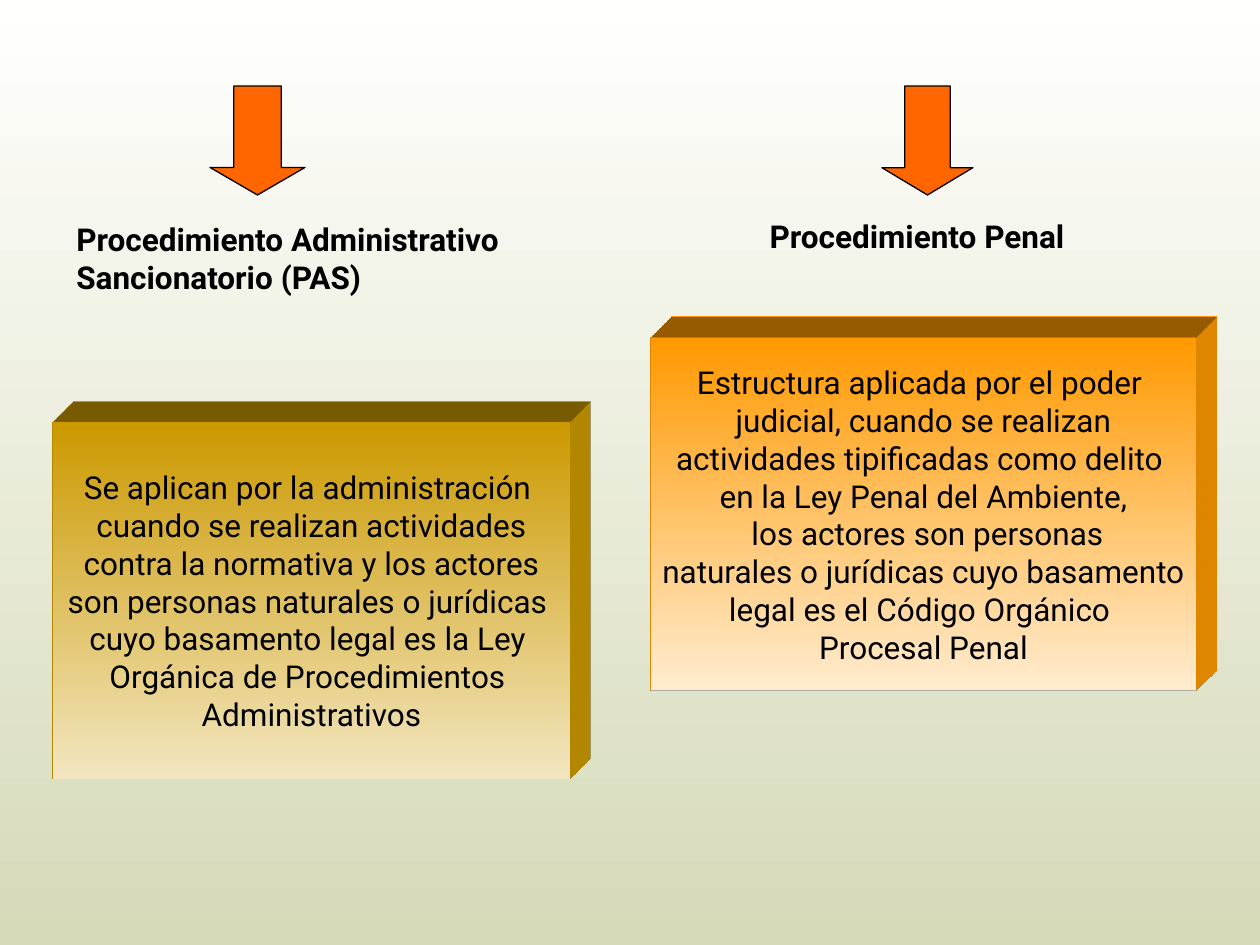
import lxml.etree
import pptx
import pptx.dml.color
import pptx.enum.shapes
import pptx.enum.text
import pptx.oxml.ns
import pptx.util

RGB = pptx.dml.color.RGBColor
SHAPE = pptx.enum.shapes.MSO_SHAPE
ALIGN = pptx.enum.text.PP_ALIGN
ANCHOR = pptx.enum.text.MSO_ANCHOR

BLACK = RGB(0x00, 0x00, 0x00)
ARROW_ORANGE = RGB(0xFF, 0x66, 0x00)
PAGE_TOP, PAGE_BOTTOM = RGB(0xFF, 0xFF, 0xFD), RGB(0xD6, 0xDA, 0xB9)
GOLD, PALE_GOLD = RGB(0xCC, 0x99, 0x00), RGB(0xF2, 0xE6, 0xC0)
ORANGE, PALE_ORANGE = RGB(0xFF, 0x99, 0x00), RGB(0xFF, 0xEC, 0xD0)

EMU_PER_PX = 914400 / 126

DEPTH_XML = """<a:spPr xmlns:a="http://schemas.openxmlformats.org/drawingml/2006/main">
<a:scene3d><a:camera prst="legacyObliqueTopRight"/><a:lightRig rig="legacyFlat3" dir="b"/></a:scene3d>
<a:sp3d extrusionH="430200" prstMaterial="legacyMatte"><a:extrusionClr><a:srgbClr val="{}"/></a:extrusionClr></a:sp3d>
</a:spPr>"""

# One branch per procedure; frames are left, top, width, height in px
branches = [
    {
        "arrow": (210, 86, 95, 109), "head": 0.29,
        "heading": "Procedimiento Administrativo Sancionatorio (PAS)",
        "heading_frame": (64, 214, 486, 126), "align": ALIGN.LEFT,
        "block": (53, 422, 517, 357), "colors": (GOLD, PALE_GOLD),
        "lines": [
            "Se aplican por la administración ",
            "cuando se realizan actividades",
            "contra la normativa y los actores",
            "son personas naturales o jurídicas ",
            "cuyo basamento legal es la Ley ",
            "Orgánica de Procedimientos ",
            "Administrativos",
        ],
    },
    {
        "arrow": (882, 86, 91, 109), "head": 0.3,
        "heading": "Procedimiento Penal",
        "heading_frame": (669, 211, 496, 50), "align": ALIGN.CENTER,
        "block": (651, 338, 545, 353), "colors": (ORANGE, PALE_ORANGE),
        "lines": [
            "Estructura aplicada por el poder ",
            "judicial, cuando se realizan",
            "actividades tipificadas como delito ",
            "en la Ley Penal del Ambiente,",
            " los actores son personas",
            "naturales o jurídicas cuyo basamento",
            "legal es el Código Orgánico ",
            "Procesal Penal",
        ],
    },
]


def px(*lengths):
    return [pptx.util.Emu(round(n * EMU_PER_PX)) for n in lengths]


def shade(fill, top, bottom):
    fill.gradient()
    fill.gradient_angle = 270
    for stop, color, position in zip(fill.gradient_stops, (top, bottom), (0, 1)):
        stop.color.rgb = color
        stop.position = position


presentation = pptx.Presentation()
presentation.slide_width, presentation.slide_height = px(1260, 945)
slide = presentation.slides.add_slide(presentation.slide_layouts[6])
shade(slide.background.fill, PAGE_TOP, PAGE_BOTTOM)

for branch in branches:
    # Arrow pointing to the heading
    arrow = slide.shapes.add_shape(SHAPE.DOWN_ARROW, *px(*branch["arrow"]))
    arrow.adjustments[0] = 0.5
    arrow.adjustments[1] = branch["head"]
    arrow.shadow.inherit = False
    arrow.fill.solid()
    arrow.fill.fore_color.rgb = ARROW_ORANGE
    arrow.line.color.rgb = BLACK
    arrow.line.width = pptx.util.Pt(0.75)

    # Raised block with the explanation
    block = slide.shapes.add_shape(SHAPE.RECTANGLE, *px(*branch["block"]))
    block.shadow.inherit = False
    shade(block.fill, *branch["colors"])
    block.line.fill.background()
    depth = lxml.etree.fromstring(DEPTH_XML.format(branch["colors"][0]))
    block_properties = block.element.find(pptx.oxml.ns.qn("p:spPr"))
    for part in list(depth):
        block_properties.append(part)
    block.text_frame.word_wrap = False
    block.text_frame.vertical_anchor = ANCHOR.MIDDLE

    # Heading
    heading = slide.shapes.add_textbox(*px(*branch["heading_frame"]))
    heading.text_frame.word_wrap = True

    # Wording of both
    for frame, lines, align, bold in (
        (block.text_frame, branch["lines"], ALIGN.CENTER, False),
        (heading.text_frame, [branch["heading"]], branch["align"], True),
    ):
        for index, line in enumerate(lines):
            paragraph = frame.add_paragraph() if index else frame.paragraphs[0]
            paragraph.alignment = align
            run = paragraph.add_run()
            run.text = line
            run.font.name = "Roboto"
            run.font.size = pptx.util.Pt(18)
            run.font.bold = bold
            run.font.color.rgb = BLACK

presentation.save("out.pptx")
